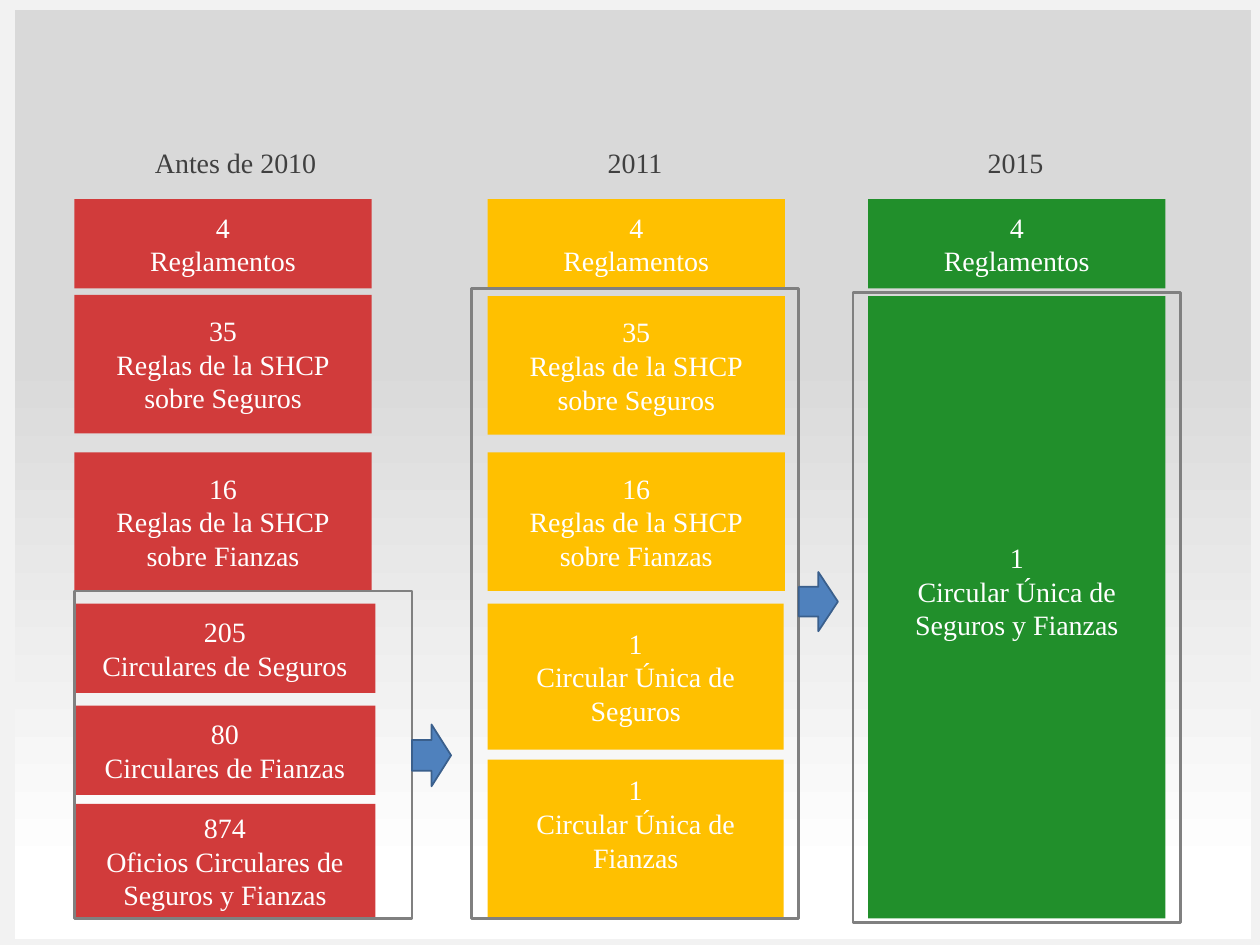
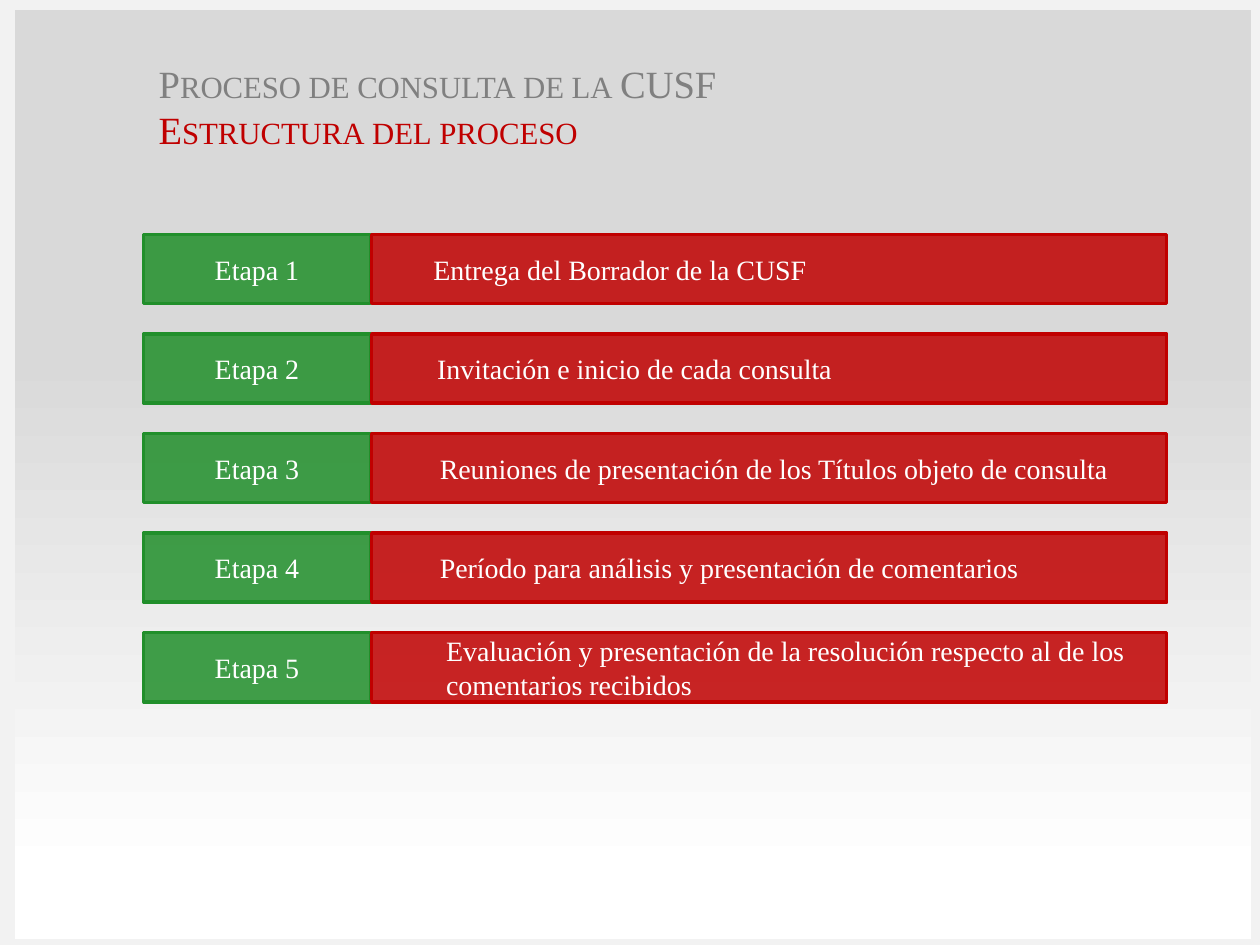
from copy import deepcopy
from dataclasses import dataclass
from typing import Any, Optional

from lxml.etree import SubElement
from pptx import Presentation
from pptx.dml.color import RGBColor
from pptx.enum.shapes import MSO_SHAPE
from pptx.enum.text import MSO_ANCHOR, MSO_AUTO_SIZE, PP_ALIGN
from pptx.oxml.ns import qn
from pptx.util import Inches, Pt


@dataclass(frozen=True)
class Theme:
    font: str = "Times New Roman"
    body: int = 16
    title: int = 22
    page: str = "F2F2F2"
    panel: tuple = ((0, "D9D9D9"), (0.37, "D9D9D9"), (0.93, "FFFFFF"))
    white: str = "FFFFFF"
    grey: str = "808080"
    heading: str = "404040"
    red: str = "D13B3B"
    yellow: str = "FFC000"
    green: str = "218F2B"
    crimson: str = "C00000"
    arrow: str = "4F81BD"
    arrow_line: str = "3A5F8C"
    inset: float = 0.05


T = Theme()


@dataclass(frozen=True)
class Area:
    left: float
    top: float
    width: float
    height: float

    def lengths(self) -> list:
        return [Inches(v) for v in (self.left, self.top, self.width, self.height)]


@dataclass(frozen=True)
class Rule:
    """One block of rules; lines holds its paragraphs."""
    top: float
    height: float
    lines: tuple
    width: float = 2.36
    bottom_inset: float = T.inset


@dataclass(frozen=True)
class Period:
    heading: str
    heading_left: float
    left: float
    colour: str
    rules: tuple
    frame: Area
    arrow: Optional[Area] = None


@dataclass(frozen=True)
class Stage:
    text: str
    indent: float


REGLAMENTOS = ("4", "Reglamentos")
SEGUROS = ("35", "Reglas de la SHCP", "sobre Seguros")
FIANZAS = ("16", "Reglas de la SHCP", "sobre Fianzas")

PERIODS = (
    Period("Antes de 2010", 0.7, 0.59, T.red, (
        Rule(1.58, 0.71, REGLAMENTOS),
        Rule(2.34, 1.1, SEGUROS),
        Rule(3.59, 1.1, FIANZAS),
        Rule(4.79, 0.71, ("205", "Circulares de Seguros"), 2.39),
        Rule(5.6, 0.71, ("80", "Circulares de Fianzas"), 2.39),
        Rule(6.38, 0.91, ("874", "Oficios Circulares de Seguros y Fianzas"), 2.39),
    ), Area(0.59, 4.69, 2.68, 2.6), Area(3.27, 5.75, 0.31, 0.49)),
    Period("2011", 3.87, 3.87, T.yellow, (
        Rule(1.58, 0.71, REGLAMENTOS),
        Rule(2.35, 1.1, SEGUROS),
        Rule(3.59, 1.1, FIANZAS),
        Rule(4.79, 1.16, ("1", "Circular Única de Seguros"), 2.35),
        Rule(6.03, 1.27, ("1", "Circular Única de Fianzas"), 2.35, 0.31),
    ), Area(3.74, 2.29, 2.6, 5), Area(6.34, 4.54, 0.31, 0.47)),
    Period("2015", 6.89, 6.89, T.green, (
        Rule(1.58, 0.71, REGLAMENTOS),
        Rule(2.35, 4.94, ("1", "Circular Única de Seguros y Fianzas"), 2.36, 0.31),
    ), Area(6.77, 2.32, 2.6, 5)),
)

STAGES = (
    Stage("Entrega del Borrador de la CUSF", 0.39),
    Stage("Invitación e inicio de cada consulta", 0.42),
    Stage("Reuniones de presentación de los Títulos objeto de consulta", 0.44),
    Stage("Período para análisis y presentación de comentarios", 0.44),
    Stage("Evaluación y presentación de la resolución respecto al de los "
          "comentarios recibidos", 0.49),
)
STAGE_TOP, STAGE_PITCH, STAGE_HEIGHT = 1.86, 0.79, 0.55


def apply(obj: Any, values: dict) -> None:
    for name, value in values.items():
        setattr(obj, name, value)


def write(tf: Any, lines: tuple, colours: tuple, align: PP_ALIGN = PP_ALIGN.CENTER,
          size: int = T.body, **frame: Any) -> None:
    """Fill a text frame, one paragraph for each line."""
    apply(tf, {"word_wrap": True, "vertical_anchor": MSO_ANCHOR.MIDDLE, **frame})
    for i, (line, colour) in enumerate(zip(lines, colours)):
        p = tf.add_paragraph() if i else tf.paragraphs[0]
        p.alignment = align
        r = p.add_run()
        r.text = line
        apply(r.font, {"name": T.font, "size": Pt(size), "bold": False})
        r.font.color.rgb = RGBColor.from_string(colour)


def add_box(slide: Any, area: Area, fill: Optional[str] = None,
            line: Optional[str] = None, weight: float = 1,
            kind: MSO_SHAPE = MSO_SHAPE.RECTANGLE, opacity: int = 100) -> Any:
    s = slide.shapes.add_shape(kind, *area.lengths())
    s.shadow.inherit = False
    if fill:
        s.fill.solid()
        s.fill.fore_color.rgb = RGBColor.from_string(fill)
        if opacity < 100:
            colour = s.element.spPr.find(qn("a:solidFill"))[0]
            SubElement(colour, qn("a:alpha")).set("val", str(opacity * 1000))
    else:
        s.fill.background()
    if line:
        s.line.color.rgb = RGBColor.from_string(line)
        s.line.width = Pt(weight)
    else:
        s.line.fill.background()
    return s


def set_backdrop(prs: Any, slide: Any) -> None:
    """Give the master its page colour and gradient panel."""
    master = prs.slide_master
    master.background.fill.solid()
    master.background.fill.fore_color.rgb = RGBColor.from_string(T.page)
    s = add_box(slide, Area(0.12, 0.08, 9.81, 7.37))
    s.fill.gradient()
    s.fill.gradient_angle = 270
    stops = s.element.spPr.find(".//" + qn("a:gsLst"))
    stops.insert(1, deepcopy(stops[0]))
    for stop, (position, colour) in zip(s.fill.gradient_stops, T.panel):
        stop.position = position
        stop.color.rgb = RGBColor.from_string(colour)
    master.shapes.element.insert(2, s.element)


def draw_periods(slide: Any) -> None:
    # Blocks of rules
    for period in PERIODS:
        for rule in period.rules:
            s = add_box(slide, Area(period.left, rule.top, rule.width, rule.height),
                        period.colour)
            write(s.text_frame, rule.lines, (T.white,) * len(rule.lines),
                  margin_bottom=Inches(rule.bottom_inset))
    # Frames, arrows and headings
    for period in PERIODS:
        add_box(slide, period.frame, line=T.grey, weight=1.5)
        if period.arrow:
            add_box(slide, period.arrow, T.arrow, T.arrow_line,
                    kind=MSO_SHAPE.RIGHT_ARROW)
        area = Area(period.heading_left, 1.11, 2.34, 0.37)
        s = slide.shapes.add_textbox(*area.lengths())
        write(s.text_frame, (period.heading,), (T.heading,),
              vertical_anchor=MSO_ANCHOR.TOP)


def draw_stages(slide: Any) -> None:
    # Title
    s = slide.shapes.title
    area = Area(1.16, -0.03, 7.69, 1.29)
    apply(s, dict(zip(("left", "top", "width", "height"), area.lengths())))
    write(s.text_frame, ("Proceso de consulta de la CUSF", "Estructura del proceso"),
          (T.grey, T.crimson), PP_ALIGN.LEFT, T.title,
          vertical_anchor=MSO_ANCHOR.BOTTOM, auto_size=MSO_AUTO_SIZE.NONE)
    for p in s.text_frame.paragraphs:
        p.runs[0].font._element.set("cap", "small")
    # Rows: stage number and its description
    for i, stage in enumerate(STAGES):
        top = STAGE_TOP + i * STAGE_PITCH
        s = add_box(slide, Area(1.14, top, 1.8, STAGE_HEIGHT), T.green, T.green, 2,
                    opacity=85)
        write(s.text_frame, (f"Etapa {i + 1}",), (T.white,))
        s = add_box(slide, Area(2.95, top, 6.31, STAGE_HEIGHT), T.crimson, T.crimson, 2,
                    opacity=85)
        write(s.text_frame, (stage.text,), (T.white,), PP_ALIGN.LEFT,
              margin_left=Inches(0.1 + stage.indent))


def main() -> None:
    prs = Presentation()
    apply(prs, {"slide_width": Inches(10), "slide_height": Inches(7.5)})
    title_only, blank = prs.slide_layouts[5], prs.slide_layouts[6]
    slide = prs.slides.add_slide(blank)
    set_backdrop(prs, slide)
    draw_periods(slide)
    draw_stages(prs.slides.add_slide(title_only))
    prs.save("out.pptx")


if __name__ == "__main__":
    main()
